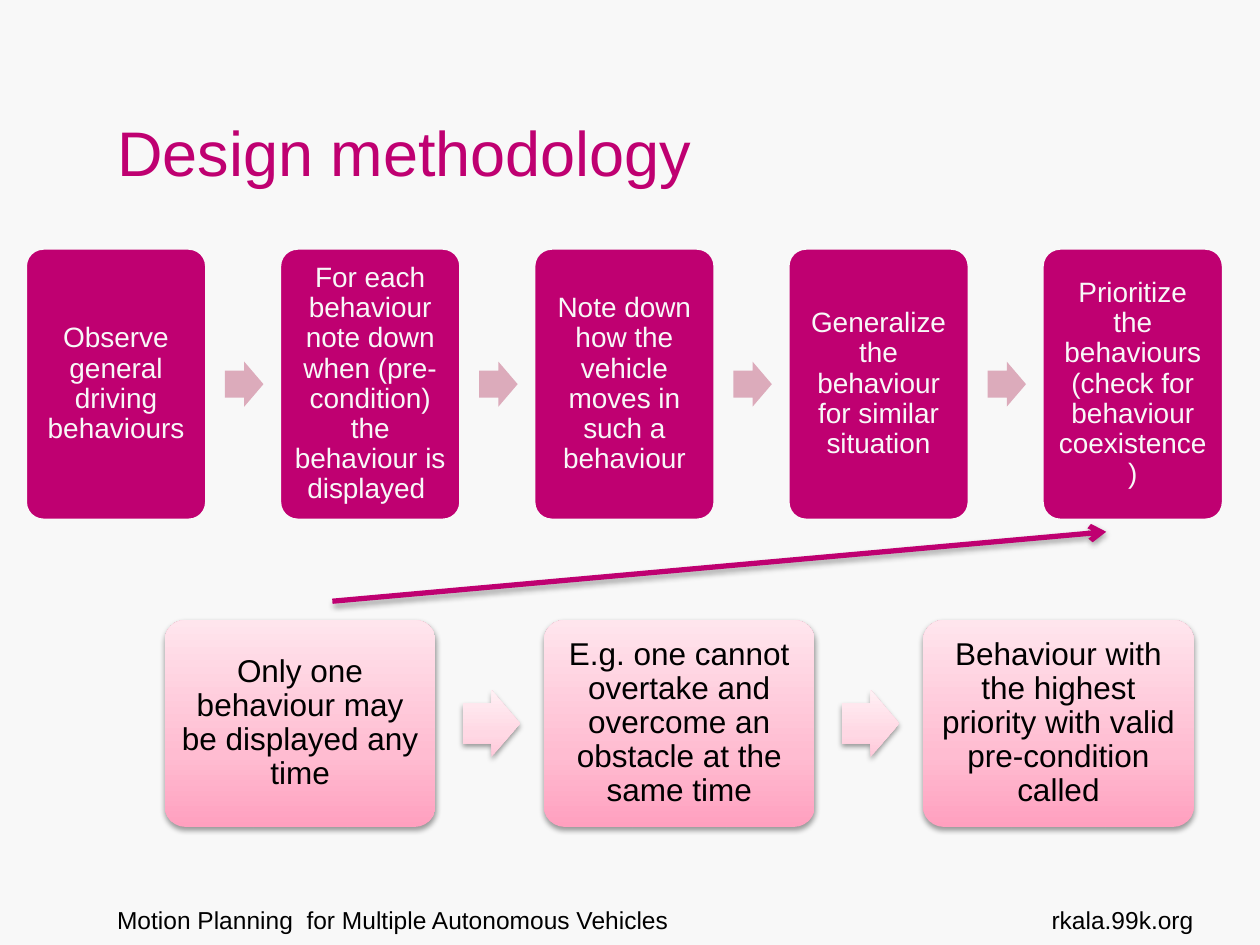
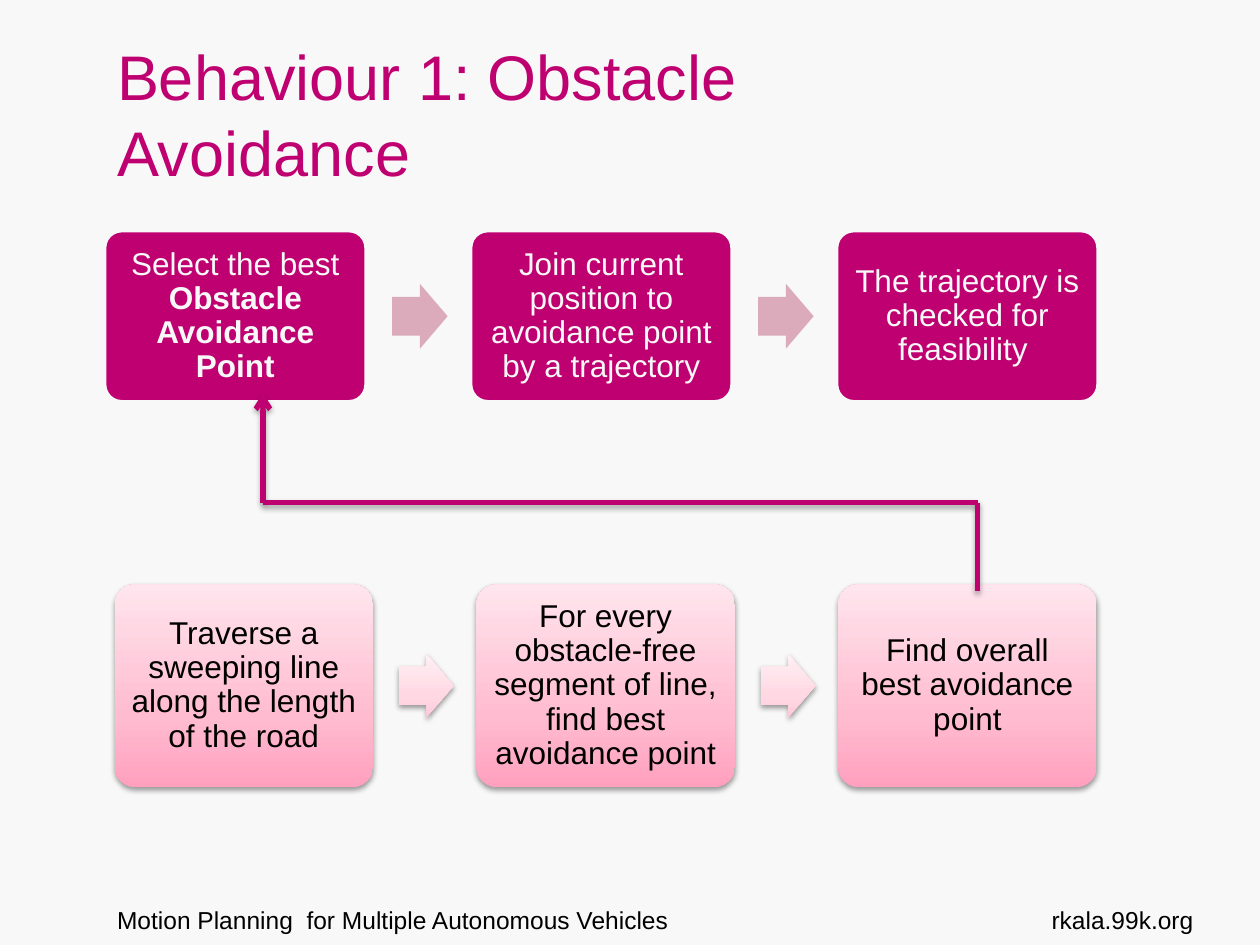
from dataclasses import dataclass

from lxml.etree import SubElement
from pptx import Presentation
from pptx.dml.color import RGBColor
from pptx.enum.shapes import MSO_CONNECTOR as Connector, MSO_SHAPE as Preset
from pptx.enum.text import MSO_ANCHOR as Anchor, PP_ALIGN as Align
from pptx.oxml import parse_xml
from pptx.oxml.ns import nsdecls, qn
from pptx.util import Cm, Pt


@dataclass(frozen=True)
class Theme:
    font: str = "Arial"
    background: str = "F8F8F8"
    accent: str = "BF0071"
    pale_arrow: str = "DCABBB"
    ink: str = "000000"
    box_gradient: tuple[str, ...] = ("FFA0BF", "FFBCD1", "FFE5ED")
    arrow_gradient: tuple[str, ...] = ("FFC9DA", "FFD8E4", "FFF0F4")
    gradient_stops: tuple[int, ...] = (0, 35, 100)
    title_size: int = 36
    step_size: int = 18
    dense_step_size: int = 16
    footer_size: int = 14


THEME = Theme()


@dataclass(frozen=True)
class Step:
    text: str
    emphasis: str = ""


@dataclass(frozen=True)
class Process:
    """A row of steps; lengths in centimetres."""
    left: float
    top: float
    step_width: float
    step_height: float
    steps: tuple[Step, ...]
    glossy: bool = False
    size: int = THEME.step_size


@dataclass(frozen=True)
class Link:
    """A straight line between two points in centimetres."""
    start: tuple[float, float]
    end: tuple[float, float]
    arrow: bool = False


@dataclass(frozen=True)
class Page:
    title: str
    processes: tuple[Process, ...]
    links: tuple[Link, ...]


PAGES = (
    Page(
        "Design methodology",
        (
            Process(0.51, 5, 3.66, 5.49, (
                Step("Observe general driving behaviours"),
                Step("For each behaviour note down when (pre-condition) "
                     "the behaviour is displayed "),
                Step("Note down how the vehicle moves in such a behaviour"),
                Step("Generalize the behaviour for similar situation"),
                Step("Prioritize the behaviours (check for behaviour coexistence)"),
            ), size=THEME.dense_step_size),
            Process(3.32, 12.5, 5.46, 4.17, (
                Step("Only one behaviour may be displayed any time"),
                Step("E.g. one cannot overtake and overcome an obstacle "
                     "at the same time"),
                Step("Behaviour with the highest priority with valid "
                     "pre-condition called"),
            ), glossy=True),
        ),
        (Link((6.7, 12.12), (22.3, 10.72), arrow=True),),
    ),
    Page(
        "Behaviour 1: Obstacle Avoidance",
        (
            Process(2.11, 4.65, 5.27, 3.45, (
                Step("Select the best ", "Obstacle Avoidance Point"),
                Step("Join current position to avoidance point by a trajectory"),
                Step("The trajectory is checked for feasibility "),
            )),
            Process(2.31, 11.78, 5.21, 4.09, (
                Step("Traverse a sweeping line along the length of the road"),
                Step("For every obstacle-free segment of line, "
                     "find best avoidance point"),
                Step("Find overall best avoidance point"),
            ), glossy=True),
        ),
        (
            Link((5.3, 10.13), (5.3, 7.92), arrow=True),
            Link((5.3, 10.13), (19.71, 10.13)),
            Link((19.71, 10.13), (19.71, 11.91)),
        ),
    ),
)


def rgb(value: str) -> RGBColor:
    return RGBColor.from_string(value)


def style(paragraph, size: int, color: str, align=Align.LEFT) -> None:
    paragraph.alignment = align
    paragraph.font.name = THEME.font
    paragraph.font.size = Pt(size)
    paragraph.font.color.rgb = rgb(color)


def add_label(slide, box: tuple[float, ...], text: str, size: int, color: str,
              align=Align.LEFT, anchor=Anchor.TOP) -> None:
    frame = slide.shapes.add_textbox(*map(Cm, box)).text_frame
    frame.word_wrap = True
    frame.vertical_anchor = anchor
    paragraph = frame.paragraphs[0]
    paragraph.text = text
    style(paragraph, size, color, align)


def add_shadow(effects, distance: int, opacity: int) -> None:
    shadow = SubElement(effects, qn("a:outerShdw"), blurRad="40000",
                        dist=str(distance), dir="5400000", rotWithShape="0")
    color = SubElement(shadow, qn("a:srgbClr"), val=THEME.ink)
    SubElement(color, qn("a:alpha"), val=str(opacity * 1000))


def apply_gradient(shape, colors: tuple[str, ...]) -> None:
    """Fill from the first colour at the bottom to the last at the top."""
    stops = "".join(
        f'<a:gs pos="{stop * 1000}"><a:srgbClr val="{color}"/></a:gs>'
        for stop, color in zip(THEME.gradient_stops, colors))
    gradient = parse_xml(
        f'<a:gradFill {nsdecls("a")} rotWithShape="1"><a:gsLst>{stops}</a:gsLst>'
        '<a:lin ang="16200000" scaled="0"/></a:gradFill>')
    shape.element.spPr.find(qn("a:prstGeom")).addnext(gradient)


def add_block(slide, preset, box: tuple[float, ...], color: str,
              gradient: tuple[str, ...], glossy: bool):
    block = slide.shapes.add_shape(preset, *map(Cm, box))
    block.shadow.inherit = False
    block.line.fill.background()
    if glossy:
        apply_gradient(block, gradient)
        add_shadow(block.element.spPr.find(qn("a:effectLst")), 20000, 38)
    else:
        block.fill.solid()
        block.fill.fore_color.rgb = rgb(color)
    return block


def add_step(slide, process: Process, left: float, step: Step) -> None:
    box = (left, process.top, process.step_width, process.step_height)
    card = add_block(slide, Preset.ROUNDED_RECTANGLE, box, THEME.accent,
                     THEME.box_gradient, process.glossy)
    card.adjustments[0] = 0.1
    if not process.glossy:
        card.line.color.rgb = rgb(THEME.background)
        card.line.width = Pt(2)

    frame = card.text_frame
    frame.word_wrap = True
    frame.vertical_anchor = Anchor.MIDDLE
    inset = Pt(process.size * 0.3)
    frame.margin_left = frame.margin_right = inset
    frame.margin_top = frame.margin_bottom = inset
    paragraph = frame.paragraphs[0]
    paragraph.line_spacing = 0.9
    paragraph.add_run().text = step.text
    if step.emphasis:
        strong = paragraph.add_run()
        strong.text = step.emphasis
        strong.font.bold = True
    color = THEME.ink if process.glossy else THEME.background
    style(paragraph, process.size, color, Align.CENTER)


def add_process(slide, process: Process) -> None:
    """Draw the steps, with arrows sized in proportion to the step width."""
    width = process.step_width
    arrow_width, arrow_height = 0.212 * width, 0.248 * width
    arrow_top = process.top + (process.step_height - arrow_height) / 2
    for index, step in enumerate(process.steps):
        left = process.left + index * 1.4 * width
        add_step(slide, process, left, step)
        if index < len(process.steps) - 1:
            box = (left + 1.1 * width, arrow_top, arrow_width, arrow_height)
            arrow = add_block(slide, Preset.RIGHT_ARROW, box, THEME.pale_arrow,
                              THEME.arrow_gradient, process.glossy)
            arrow.adjustments[0] = 0.6
            arrow.adjustments[1] = 0.5


def add_link(slide, link: Link) -> None:
    line = slide.shapes.add_connector(
        Connector.STRAIGHT, *map(Cm, link.start + link.end))
    line.line.color.rgb = rgb(THEME.accent)
    line.line.width = Pt(3)
    properties = line.element.spPr
    if link.arrow:
        SubElement(properties.find(qn("a:ln")), qn("a:tailEnd"), type="arrow")
    add_shadow(SubElement(properties, qn("a:effectLst")), 23000, 35)


def add_page(deck, page: Page) -> None:
    slide = deck.slides.add_slide(deck.slide_layouts[6])
    slide.background.fill.solid()
    slide.background.fill.fore_color.rgb = rgb(THEME.background)
    add_label(slide, (2.11, 18.11, 17.6, 1.32),
              "Motion Planning  for Multiple Autonomous Vehicles",
              THEME.footer_size, THEME.ink)
    add_label(slide, (2.11, 0.76, 17.2, 3.18), page.title,
              THEME.title_size, THEME.accent, anchor=Anchor.BOTTOM)
    add_label(slide, (20.5, 18.11, 3.81, 1.32), "rkala.99k.org",
              THEME.footer_size, THEME.ink, Align.RIGHT)
    for process in page.processes:
        add_process(slide, process)
    for link in page.links:
        add_link(slide, link)


def main() -> None:
    deck = Presentation()
    deck.slide_width, deck.slide_height = Cm(25.4), Cm(19.05)
    for page in PAGES:
        add_page(deck, page)
    deck.save("out.pptx")


if __name__ == "__main__":
    main()
